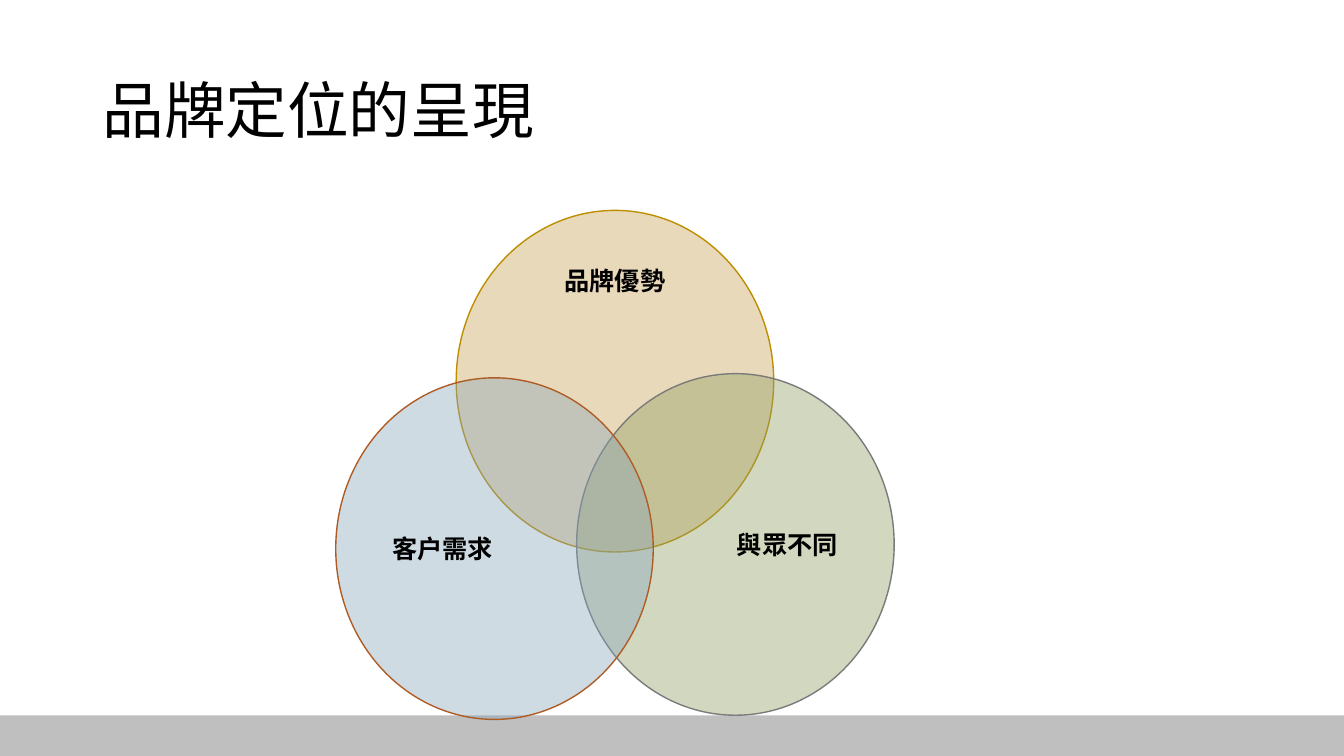
import pptx
import pptx.util
import pptx.dml.color
import pptx.enum.shapes
import pptx.enum.text
import pptx.oxml
import pptx.oxml.ns
from dataclasses import dataclass

Pt = pptx.util.Pt
Align = pptx.enum.text.PP_ALIGN
Anchor = pptx.enum.text.MSO_ANCHOR
Shape = pptx.enum.shapes.MSO_SHAPE


@dataclass(frozen=True)
class Theme:
    font: str = "Noto Sans CJK TC"
    ink: str = "000000"
    band: str = "BFBFBF"
    gold: tuple = ("C9A057", "BD8E00")
    green: tuple = ("909F5F", "7A7A7A")
    blue: tuple = ("88A5BA", "AF5C24")
    alpha: int = 40
    head: int = 44
    label: int = 18
    line: int = 1


theme = Theme()


def color(code):
    return pptx.dml.color.RGBColor.from_string(code)


def element(parent, tag, **attrs):
    item = pptx.oxml.parse_xml(f"<a:{tag} {pptx.oxml.ns.nsdecls('a')}/>")
    for key, value in attrs.items():
        item.set(key, value)
    parent.append(item)


def style(para, size, bold=False):
    font = para.font
    font.name, font.size, font.bold = theme.font, Pt(size), bold
    font.color.rgb = color(theme.ink)
    # East Asian typeface follows the Latin one
    props = para._p.pPr.find(pptx.oxml.ns.qn("a:defRPr"))
    element(props, "ea", typeface=theme.font)


def place(shape, box):
    shape.left, shape.top, shape.width, shape.height = map(Pt, box)


# Grey band along the foot
def footer(slide, box):
    band = slide.shapes.add_shape(Shape.RECTANGLE, *map(Pt, box))
    band.shadow.inherit = False
    band.fill.solid()
    band.fill.fore_color.rgb = color(theme.band)
    band.line.fill.background()


# Slide title
def heading(slide, box, text):
    title = slide.shapes.title
    place(title, box)
    frame = title.text_frame
    frame.text = text
    frame.vertical_anchor = Anchor.MIDDLE
    para = frame.paragraphs[0]
    para.alignment = Align.LEFT
    para.line_spacing = 0.9
    style(para, theme.head)


# One translucent, labelled circle
def circle(slide, box, text, paint, align, anchor):
    disc = slide.shapes.add_shape(Shape.OVAL, *map(Pt, box))
    disc.shadow.inherit = False
    fill, line = paint
    disc.fill.solid()
    disc.fill.fore_color.rgb = color(fill)
    tint = disc._element.spPr.find(".//" + pptx.oxml.ns.qn("a:srgbClr"))
    element(tint, "alpha", val=str(theme.alpha * 1000))
    disc.line.color.rgb = color(line)
    disc.line.width = Pt(theme.line)
    frame = disc.text_frame
    frame.text = text
    frame.word_wrap = False
    frame.vertical_anchor = anchor
    para = frame.paragraphs[0]
    para.alignment = align
    style(para, theme.label, bold=True)


# Three overlapping circles
def venn(slide, box):
    left, top, width, height = box
    wide, high = 226.8, 244
    right, low = left + width - wide, top + height - high
    circles = [
        ((left + right) / 2, top, "品牌優勢", theme.gold, Align.CENTER, Anchor.TOP),
        (right, low - 3, "與眾不同", theme.green, Align.RIGHT, Anchor.MIDDLE),
        (left, low, "客戶需求", theme.blue, Align.LEFT, Anchor.MIDDLE),
    ]
    for x, y, *rest in circles:
        circle(slide, (x, y, wide, high), *rest)


def main():
    deck = pptx.Presentation()
    deck.slide_width, deck.slide_height = Pt(960), Pt(540)
    slide = deck.slides.add_slide(deck.slide_layouts[5])
    footer(slide, (0, 511, 960, 29))
    heading(slide, (66, 28.8, 828, 104.4), "品牌定位的呈現")
    venn(slide, (239.8, 150.3, 398.9, 363.6))
    deck.save("out.pptx")


if __name__ == "__main__":
    main()
